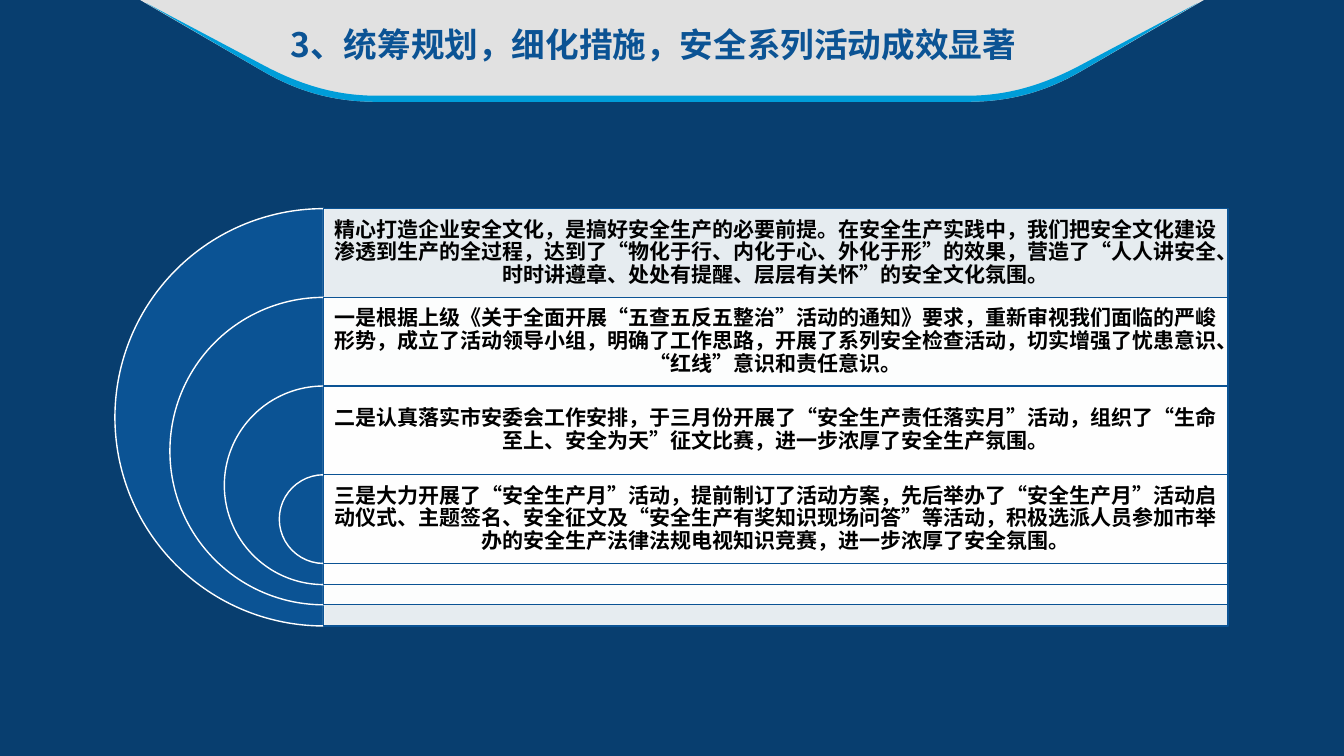
from dataclasses import dataclass

from lxml.etree import SubElement
from pptx import Presentation
from pptx.dml.color import RGBColor
from pptx.enum.lang import MSO_LANGUAGE_ID
from pptx.enum.shapes import MSO_SHAPE
from pptx.enum.text import MSO_ANCHOR, MSO_AUTO_SIZE, PP_ALIGN
from pptx.oxml.ns import qn
from pptx.util import Pt

PX = 9144  # one px is a hundredth of an inch
PAGE_WIDTH, PAGE_HEIGHT = 1333, 750


@dataclass(frozen=True)
class Theme:
    background: str = "083E6F"
    header: str = "E1E1E1"
    header_edge: str = "009DD9"
    accent: str = "0B5394"
    white: str = "FFFFFF"
    text: str = "000000"
    title_font: str = "Noto Sans CJK SC"
    body_font: str = "Calibri"
    title_size: int = 24
    body_size: int = 15
    line_width: int = 1
    panel_opacity: int = 90


THEME = Theme()

TITLE = "3、统筹规划，细化措施，安全系列活动成效显著"
ACTIVITIES = [
    "精心打造企业安全文化，是搞好安全生产的必要前提。在安全生产实践中，我们把安全文化建设渗透到生产的全过程，"
    "达到了“物化于行、内化于心、外化于形”的效果，营造了“人人讲安全、时时讲遵章、处处有提醒、层层有关怀”的安全文化氛围。",
    "一是根据上级《关于全面开展“五查五反五整治”活动的通知》要求，重新审视我们面临的严峻形势，成立了活动领导小组，"
    "明确了工作思路，开展了系列安全检查活动，切实增强了忧患意识、“红线”意识和责任意识。",
    "二是认真落实市安委会工作安排，于三月份开展了“安全生产责任落实月”活动，组织了“生命至上、安全为天”征文比赛，"
    "进一步浓厚了安全生产氛围。",
    "三是大力开展了“安全生产月”活动，提前制订了活动方案，先后举办了“安全生产月”活动启动仪式、主题签名、"
    "安全征文及“安全生产有奖知识现场问答”等活动，积极选派人员参加市举办的安全生产法律法规电视知识竞赛，"
    "进一步浓厚了安全氛围。",
]

# Nested diagram: rows step down, and the outer rings share the drop below the last row
PANEL_LEFT, PANEL_TOP, PANEL_WIDTH = 321, 207, 897
ROW_HEIGHT, RING_DROP, ROW_MARGIN = 88, 62, 6

# Right half of the header outlines; a curve is four points in a row
LOWER_CURVE = [(959, 101), (1002, 101), (1038, 91), (1075, 69)]
UPPER_CURVE = [(1075, 63), (1038, 83), (1002, 95), (959, 95)]


def px(*lengths):
    return [round(length * PX) for length in lengths]


def paint(shape, fill, line=None):
    shape.shadow.inherit = False
    shape.fill.solid()
    shape.fill.fore_color.rgb = RGBColor.from_string(fill)
    if line:
        shape.line.color.rgb = RGBColor.from_string(line)
        shape.line.width = Pt(THEME.line_width)
    else:
        shape.line.fill.background()


def set_opacity(shape, percent):
    color = shape.fill._xPr.find(qn("a:solidFill"))[0]
    SubElement(color, qn("a:alpha")).set("val", str(percent * 1000))


def add_span(para, text, font, size, color):
    span = para.add_run()
    span.text = text
    span.font.name = font
    span.font.size = Pt(size)
    span.font.bold = True
    span.font.color.rgb = RGBColor.from_string(color)
    span.font.language_id = MSO_LANGUAGE_ID.SIMPLIFIED_CHINESE
    east_asian = SubElement(span.font._element, qn("a:ea"))
    east_asian.set("typeface", THEME.title_font)


def bend(shape, curve_starts):
    """Turn the three segments after each start point into one Bezier curve."""
    outline = next(shape._element.iter(qn("a:moveTo"))).getparent()
    segments = list(outline)
    for start in curve_starts:
        controls = segments[start + 1:start + 4]
        curve = SubElement(outline, qn("a:cubicBezTo"))
        controls[0].addprevious(curve)
        for segment in controls:
            curve.append(segment[0])
            outline.remove(segment)


def add_symmetric_outline(page, right_half, curve_starts, fill):
    left_half = [(PAGE_WIDTH - x, y) for x, y in reversed(right_half)]
    points = [tuple(px(x, y)) for x, y in right_half + left_half]
    mirrored_starts = [len(points) - 4 - start for start in curve_starts]
    builder = page.shapes.build_freeform(*points[0])
    builder.add_line_segments(points[1:], close=True)
    outline = builder.convert_to_shape()
    bend(outline, curve_starts + mirrored_starts)
    paint(outline, fill)


def add_header(page):
    band = LOWER_CURVE + [(1194, 0)]
    edge = LOWER_CURVE + [(1188, 3)] + UPPER_CURVE
    add_symmetric_outline(page, band, [0], THEME.header)
    add_symmetric_outline(page, edge, [0, 5], THEME.header_edge)


def add_title(page):
    title = page.shapes.title
    title.left, title.top, title.width, title.height = px(278, 19, 793, 50)
    page.shapes._spTree.append(title._element)  # above the header band
    frame = title.text_frame
    frame.auto_size = MSO_AUTO_SIZE.SHAPE_TO_FIT_TEXT
    frame.vertical_anchor = MSO_ANCHOR.TOP
    para = frame.paragraphs[0]
    para.alignment = PP_ALIGN.LEFT
    add_span(para, TITLE, THEME.title_font, THEME.title_size, THEME.accent)


def add_ring(shapes, top, diameter):
    ring = shapes.add_shape(
        MSO_SHAPE.PIE, *px(PANEL_LEFT - diameter / 2, top, diameter, diameter))
    ring.adjustments[0] = 54
    ring.adjustments[1] = 162
    paint(ring, THEME.accent, THEME.white)


def add_panel(shapes, top, height):
    panel = shapes.add_shape(
        MSO_SHAPE.RECTANGLE, *px(PANEL_LEFT, top, PANEL_WIDTH, height))
    paint(panel, THEME.white, THEME.accent)
    set_opacity(panel, THEME.panel_opacity)


def add_row_text(shapes, top, text):
    box = shapes.add_textbox(*px(PANEL_LEFT, top, PANEL_WIDTH, ROW_HEIGHT))
    frame = box.text_frame
    frame.word_wrap = True
    frame.vertical_anchor = MSO_ANCHOR.MIDDLE
    (frame.margin_left, frame.margin_top,
     frame.margin_right, frame.margin_bottom) = px(*[ROW_MARGIN] * 4)
    para = frame.paragraphs[0]
    para.alignment = PP_ALIGN.CENTER
    para.line_spacing = 0.9
    para.space_after = Pt(5)
    add_span(para, text, THEME.body_font, THEME.body_size, THEME.text)


def add_diagram(page):
    shapes = page.shapes.add_group_shape().shapes
    last = len(ACTIVITIES) - 1
    for index, text in enumerate(ACTIVITIES):
        inner_rows = last - index
        top = PANEL_TOP + index * ROW_HEIGHT
        extent = (inner_rows + 1) * ROW_HEIGHT + round(RING_DROP * inner_rows / last)
        add_ring(shapes, top, extent)
        add_panel(shapes, top, extent)
        add_row_text(shapes, top, text)


def main():
    deck = Presentation()
    deck.slide_width, deck.slide_height = px(PAGE_WIDTH, PAGE_HEIGHT)
    page = deck.slides.add_slide(deck.slide_layouts.get_by_name("Title Only"))
    page.background.fill.solid()
    page.background.fill.fore_color.rgb = RGBColor.from_string(THEME.background)

    # Header band, title, nested activity rows
    add_header(page)
    add_title(page)
    add_diagram(page)
    deck.save("out.pptx")


if __name__ == "__main__":
    main()
